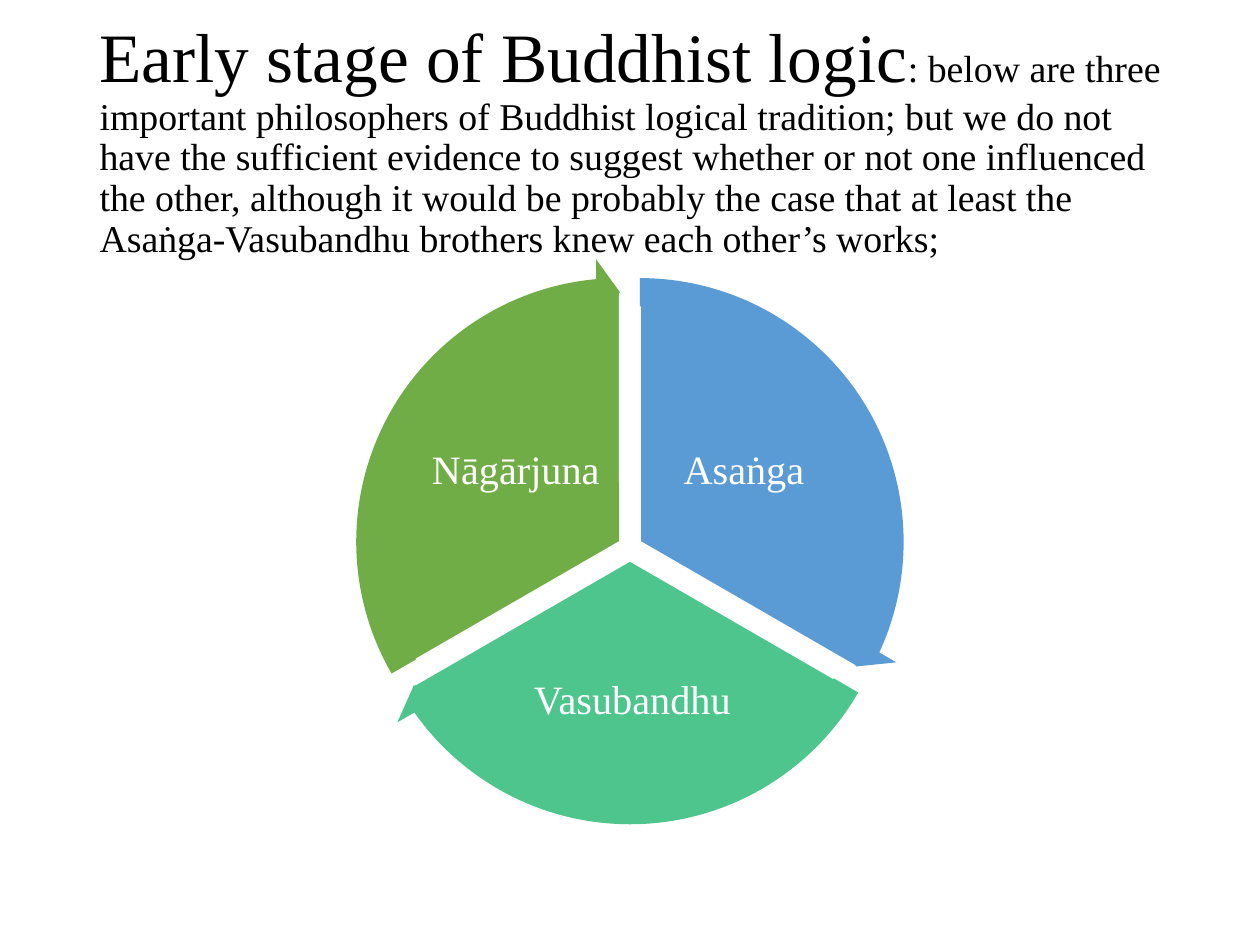
"""Build a slide with a three-part cycle of early Buddhist logicians."""
from pptx import Presentation
from pptx.dml.color import RGBColor
from pptx.enum.shapes import MSO_SHAPE
from pptx.enum.text import MSO_ANCHOR, MSO_AUTO_SIZE, PP_ALIGN
from pptx.util import Inches, Pt

PIE, CIRCULAR_ARROW = MSO_SHAPE.PIE, MSO_SHAPE.CIRCULAR_ARROW
MIDDLE = MSO_ANCHOR.MIDDLE
CENTER, LEFT = PP_ALIGN.CENTER, PP_ALIGN.LEFT
NO_AUTOFIT = MSO_AUTO_SIZE.NONE
BLACK = RGBColor(0x00, 0x00, 0x00)
WHITE = RGBColor(0xFF, 0xFF, 0xFF)
BLUE = RGBColor(0x5B, 0x9B, 0xD5)
TEAL = RGBColor(0x4D, 0xC5, 0x8D)
GREEN = RGBColor(0x70, 0xAD, 0x47)
FONT = "Times New Roman"
PIE_SIZE, ARROW_SIZE = 4, 4.5


def style_run(run, size, color):
    run.font.name = FONT
    run.font.size = Pt(size)
    run.font.color.rgb = color


def add_round_shape(kind, center, size, color, adjustments):
    x, y = center
    shape = slide.shapes.add_shape(
        kind, Inches(x - size / 2), Inches(y - size / 2), Inches(size), Inches(size))
    for index, value in enumerate(adjustments):
        shape.adjustments[index] = value
    shape.shadow.inherit = False
    shape.fill.solid()
    shape.fill.fore_color.rgb = color
    return shape


prs = Presentation()
prs.slide_width, prs.slide_height = Inches(10), Inches(7.5)
slide = prs.slides.add_slide(prs.slide_layouts[5])

title = slide.shapes.title
title.left, title.top = Inches(0.69), Inches(0.4)
title.width, title.height = Inches(8.62), Inches(1.45)
title.text_frame.word_wrap = True
title.text_frame.auto_size = NO_AUTOFIT
title.text_frame.vertical_anchor = MIDDLE
title.text_frame.margin_right = Inches(0.07)
heading = title.text_frame.paragraphs[0]
heading.alignment = LEFT
heading.line_spacing = 0.9
for text, size in [
    ("Early stage of Buddhist logic", 39.6),
    (": below are three important philosophers of Buddhist logical tradition; "
     "but we do not have the sufficient evidence to suggest whether or not one "
     "influenced the other, although it would be probably the case that at least "
     "the Asaṅga-Vasubandhu brothers knew each other’s works;", 21.6),
]:
    run = heading.add_run()
    run.text = text
    style_run(run, size, BLACK)

philosophers = [
    ("Asaṅga", BLUE, (5.08, 4.3), (162, 18), (14.72, 161.99), (5.19, 3.15, 1.43, 1.19)),
    ("Vasubandhu", TEAL, (5, 4.45), (18, 90), (86.72, 18), (3.95, 5.04, 2.14, 1.05)),
    ("Nāgārjuna", GREEN, (4.92, 4.3), (90, 162), (158.73, 90), (3.38, 3.15, 1.43, 1.19)),
]

for name, color, center, sector, _, label_box in philosophers:
    slice_ = add_round_shape(PIE, center, PIE_SIZE, color, sector)
    slice_.line.color.rgb = WHITE
    slice_.line.width = Pt(1)

    label = slide.shapes.add_textbox(*map(Inches, label_box)).text_frame
    label.word_wrap = True
    label.vertical_anchor = MIDDLE
    label.margin_left = label.margin_right = Inches(0.03)
    label.margin_top = label.margin_bottom = Inches(0.03)
    label.text = name
    label.paragraphs[0].alignment = CENTER
    label.paragraphs[0].line_spacing = 0.9
    style_run(label.paragraphs[0].runs[0], 23, WHITE)

for _, color, center, _, (head_angle, tail_angle), _ in philosophers:
    arrow = add_round_shape(CIRCULAR_ARROW, center, ARROW_SIZE, color,
                            (0.05, 3.28, head_angle, tail_angle, 0.06))
    arrow.line.fill.background()

prs.save("out.pptx")
